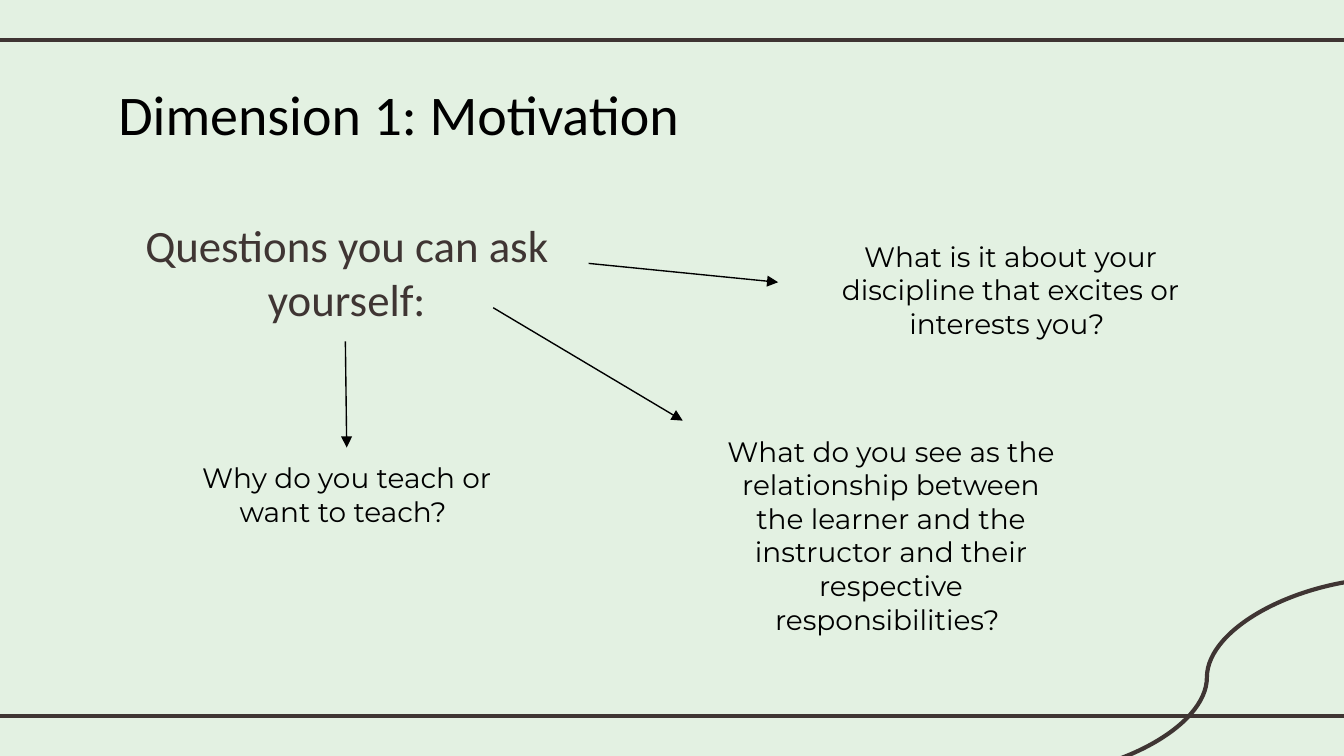
from lxml.etree import SubElement
from pptx import Presentation
from pptx.dml.color import RGBColor
from pptx.enum.shapes import MSO_CONNECTOR as Connector
from pptx.enum.text import MSO_ANCHOR as Anchor, MSO_AUTO_SIZE as AutoSize, PP_ALIGN as Align
from pptx.oxml.ns import qn
from pptx.util import Inches, Pt

WIDTH = 10
HEIGHT = WIDTH * 9 / 16
COLORS = {"mint": "E3F1E2", "brown": "3F3533", "black": "000000"}
QUESTIONS = [
    ("What is it about your discipline that excites or interests you? ", (6.16, 1.68, 2.72, 0.99)),
    ("What do you see as the relationship between the learner and the instructor "
     "and their respective responsibilities? ", (5.27, 3.13, 2.72, 1.73)),
    ("Why do you teach or want to teach? ", (1.22, 3.33, 2.72, 0.99)),
]
ARROWS = [
    ((4.38, 1.96), (5.79, 2.1)),
    ((3.67, 2.29), (5.08, 3.13)),
    ((2.57, 2.54), (2.58, 3.33)),
]


def color(name):
    """Return the named palette colour."""
    return RGBColor.from_string(COLORS[name])


def draw_line(page, start, end, tint, weight, kind=Connector.STRAIGHT, arrow=False):
    """Draw a shadowless connector, with an arrowhead at its end if asked."""
    ends = [Inches(value) for value in (*start, *end)]
    connector = page.shapes.add_connector(kind, *ends)
    connector.line.color.rgb = color(tint)
    connector.line.width = Pt(weight)
    properties = connector._element.spPr
    if arrow:
        SubElement(properties.find(qn("a:ln")), qn("a:tailEnd"), type="triangle")
    SubElement(properties, qn("a:effectLst"))


def fill_placeholder(holder, text, box, font, size, tint, align=Align.CENTER):
    """Move a placeholder to its box and set its unbulleted text."""
    holder.left, holder.top, holder.width, holder.height = map(Inches, box)
    frame = holder.text_frame
    frame.text = text
    frame.word_wrap = True
    frame.auto_size = AutoSize.NONE
    frame.vertical_anchor = Anchor.TOP
    frame.margin_left = frame.margin_right = Inches(0.1)
    frame.margin_top = frame.margin_bottom = Inches(0.1)
    para = frame.paragraphs[0]
    para.alignment = align
    para.space_before = Pt(0)
    para.font.name, para.font.size, para.font.bold = font, Pt(size), False
    para.font.color.rgb = color(tint)
    properties = para._p.get_or_add_pPr()
    properties.set("marL", "0")
    properties.set("indent", "0")
    bullet = SubElement(properties, qn("a:buNone"))
    properties.find(qn("a:defRPr")).addprevious(bullet)


def draw_frame(page):
    """Draw the two rules and the corner curve."""
    for height in (0.3, 5.33):
        draw_line(page, (-0.08, height), (WIDTH + 0.08, height), "brown", 2.25)
    draw_line(page, (10.37, 4.3), (7.59, 5.78), "brown", 2.25, Connector.CURVE)


def draw_questions(page):
    """Place the prompt, its three questions and the arrows to them."""
    prompt, *holders = list(page.placeholders)[1:]
    fill_placeholder(prompt, "Questions you can ask yourself:",
                     (0.78, 1.52, 3.6, 0.88), "Calibri", 24, "brown")
    for holder, (text, box) in zip(holders, QUESTIONS):
        fill_placeholder(holder, text, box, "Montserrat", 15, "black")
    for start, end in ARROWS:
        draw_line(page, start, end, "black", 0.75, arrow=True)


def main():
    """Build and save the slide."""
    deck = Presentation()
    deck.slide_width, deck.slide_height = Inches(WIDTH), Inches(HEIGHT)
    page = deck.slides.add_slide(deck.slide_layouts.get_by_name("Comparison"))
    page.background.fill.solid()
    page.background.fill.fore_color.rgb = color("mint")
    draw_frame(page)
    fill_placeholder(page.shapes.title, "Dimension 1: Motivation",
                     (0.78, 0.49, 6.21, 0.63), "Calibri", 30, "black", Align.LEFT)
    draw_questions(page)
    deck.save("out.pptx")


if __name__ == "__main__":
    main()
